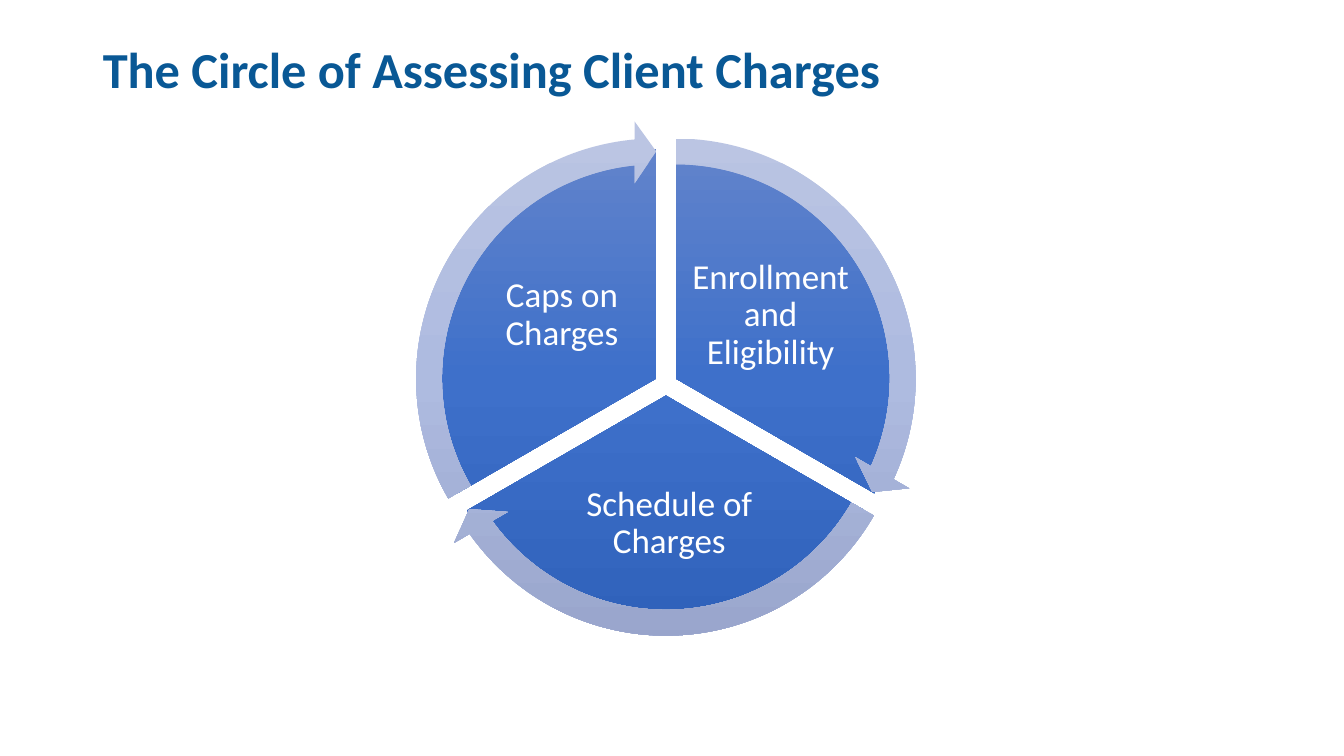
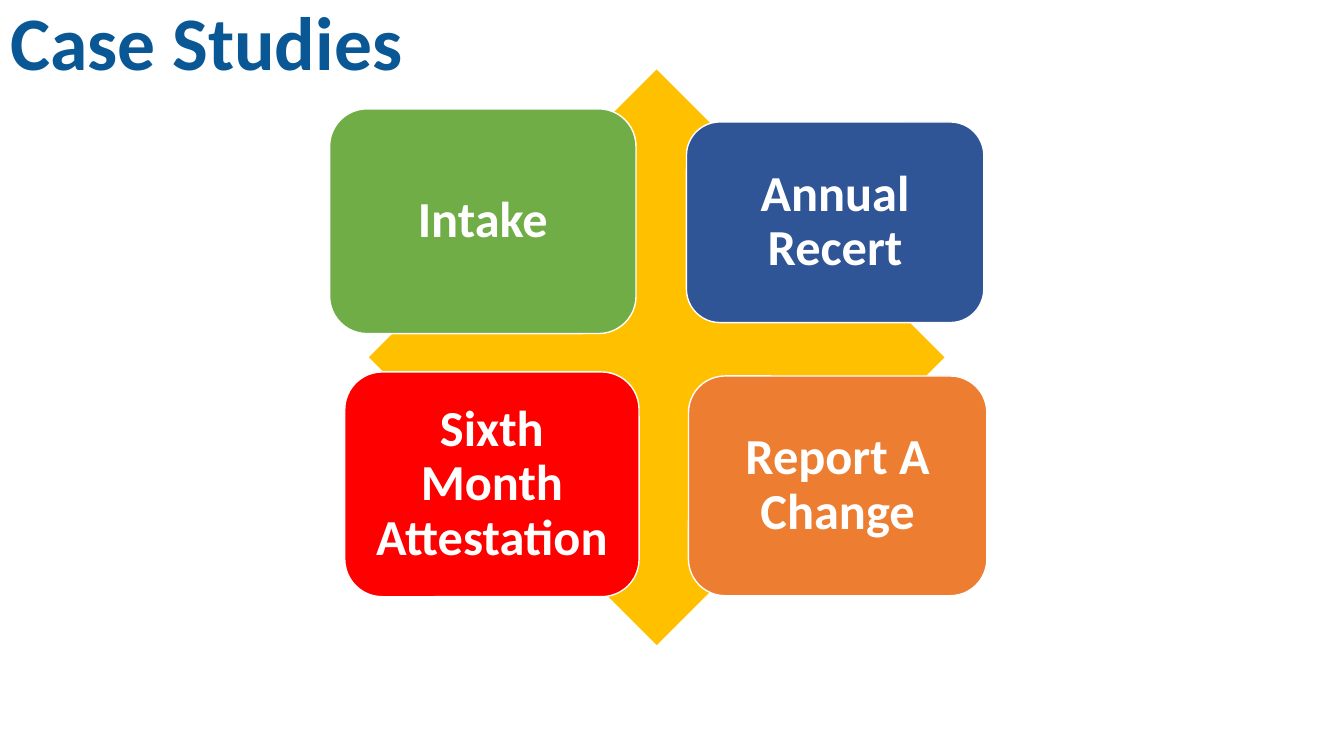
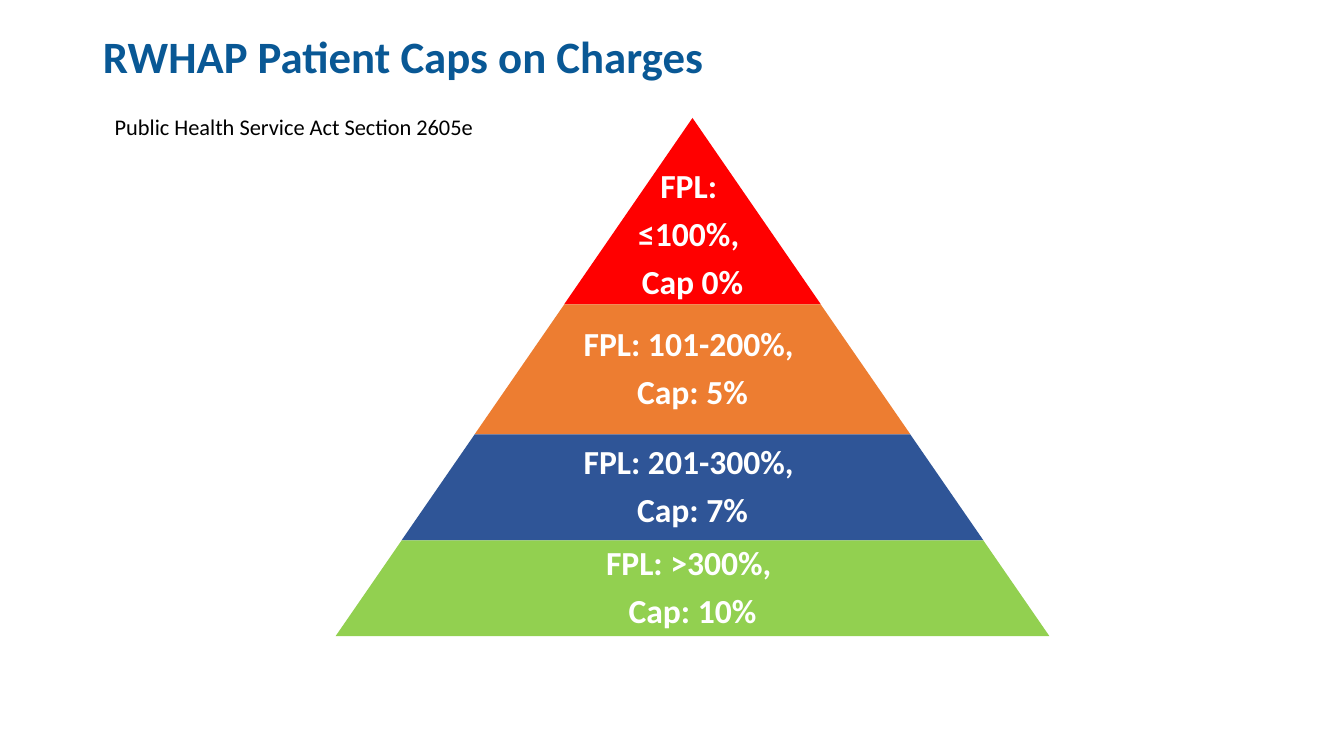
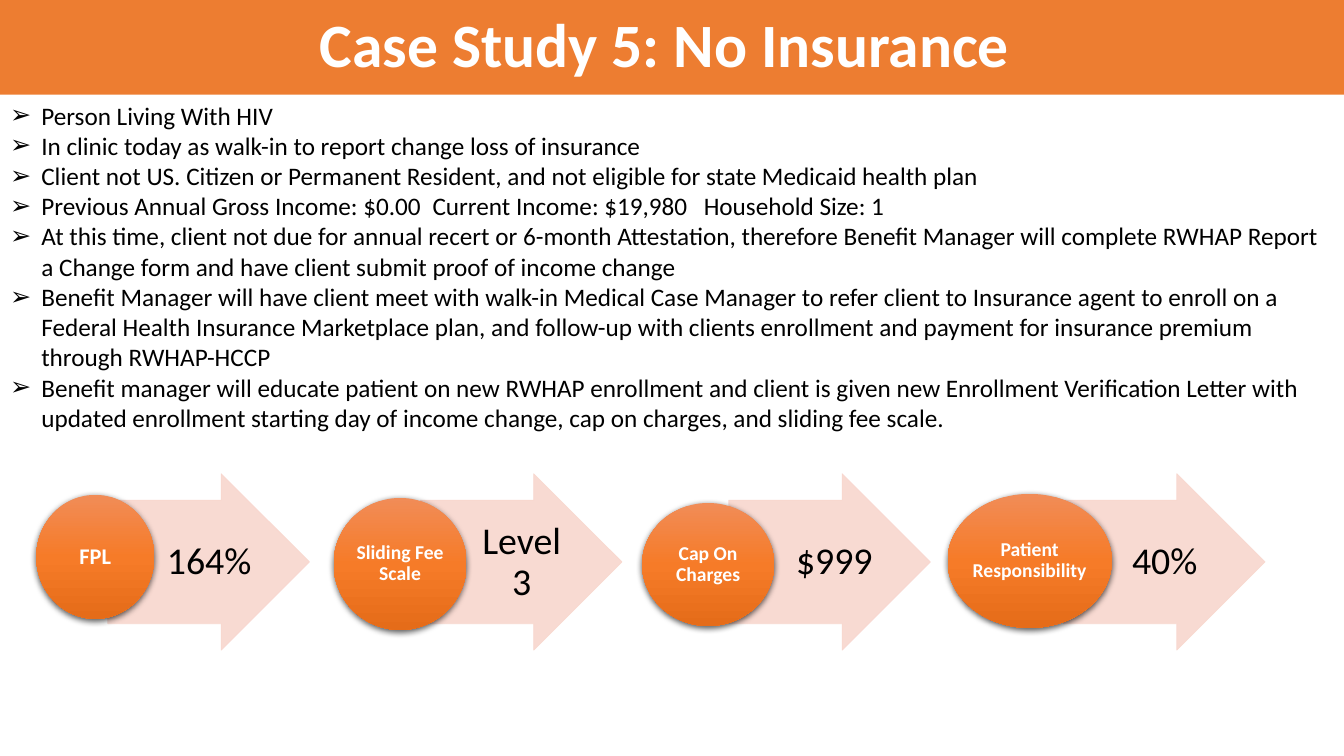
from copy import deepcopy

from lxml import etree
from pptx import Presentation
from pptx import util as u
from pptx.dml.color import RGBColor
from pptx.enum import shapes, text
from pptx.oxml.ns import qn

FONT = "Calibri"
WHITE = RGBColor(0xFF, 0xFF, 0xFF)
BLACK = RGBColor(0x00, 0x00, 0x00)
NAVY = RGBColor(0x09, 0x58, 0x95)
BLUE = RGBColor(0x2F, 0x55, 0x97)
GREEN = RGBColor(0x70, 0xAD, 0x47)
LIME = RGBColor(0x92, 0xD0, 0x50)
RED = RGBColor(0xFF, 0x00, 0x00)
ORANGE = RGBColor(0xED, 0x7D, 0x31)
GOLD = RGBColor(0xFF, 0xC0, 0x00)
PEACH = RGBColor(0xF8, 0xD7, 0xCE)
PIE_SHADES = [RGBColor.from_string(c) for c in ("6183CB", "3E70CA", "3062BB")]
RING_SHADES = [RGBColor.from_string(c) for c in ("BBC5E3", "AEBBE0", "98A4CB")]
BUTTON_SHADES = [RGBColor.from_string(c) for c in ("F18C57", "F67B28", "E56C19")]

SHAPE = shapes.MSO_SHAPE
ALIGN = text.PP_ALIGN
ANCHOR = text.MSO_ANCHOR

deck = Presentation()
deck.slide_width, deck.slide_height = u.Inches(13.33), u.Inches(7.5)

# All areas are (left, top, width, height) on a grid of 40 columns and 30 rows.
COLUMN, ROW = deck.slide_width / 40, deck.slide_height / 30


def draw(page, kind, area, fill=None, adjust=()):
    """Add a preset shape (a text box if kind is None); a list of fills is a gradient."""
    left, top, wide, high = area
    spot = [round(n) for n in (left * COLUMN, top * ROW, wide * COLUMN, high * ROW)]
    if kind is None:
        return page.shapes.add_textbox(*spot)
    shape = page.shapes.add_shape(kind, *spot)
    shape.shadow.inherit = False
    shape.line.fill.background()
    for index, value in enumerate(adjust):
        shape.adjustments[index] = value
    if isinstance(fill, list):
        shape.fill.gradient()
        shape.fill.gradient_angle = 270
        stops = shape.element.spPr.find(".//" + qn("a:gsLst"))
        stops.insert(1, deepcopy(stops[0]))
        for stop, colour, position in zip(shape.fill.gradient_stops, fill, (0, 0.5, 1)):
            stop.color.rgb, stop.position = colour, position
    else:
        shape.fill.solid()
        shape.fill.fore_color.rgb = fill
    return shape


def write(box, lines, size, colour=WHITE, bold=False, align=ALIGN.CENTER,
          anchor=ANCHOR.MIDDLE, spacing=0.9, after=0, margins=(0.1, 0.05, 0.1, 0.05)):
    """Fill a box with one paragraph a line; margins are left, top, right, bottom inches."""
    frame = box.text_frame
    frame.word_wrap, frame.auto_size = True, text.MSO_AUTO_SIZE.NONE
    frame.vertical_anchor = anchor
    (frame.margin_left, frame.margin_top,
     frame.margin_right, frame.margin_bottom) = map(u.Inches, margins)
    for index, line in enumerate(lines):
        para = frame.add_paragraph() if index else frame.paragraphs[0]
        para.alignment, para.line_spacing = align, spacing
        para.space_before, para.space_after = u.Pt(0), u.Pt(after)
        span = para.add_run()
        span.text = line
        span.font.name, span.font.size, span.font.bold = FONT, u.Pt(size), bold
        span.font.color.rgb = colour


# Pages and titles
TITLE_ONLY, TITLE_AND_BODY = deck.slide_layouts[5], deck.slide_layouts[1]
TITLES = [
    (TITLE_ONLY, "The Circle of Assessing Client Charges", 36, (2.76, 1.04, 34.5, 3.64)),
    (TITLE_ONLY, "Case Studies", 54, (0, 0, 40, 3.68)),
    (TITLE_ONLY, "RWHAP Patient Caps on Charges", 32, (2.76, 0.52, 34.5, 3.64)),
    (TITLE_AND_BODY, "Case Study 5: No Insurance ", 44, (0, 0, 40, 3.76)),
]
pages = []
for layout, heading, size, (left, top, wide, high) in TITLES:
    page = deck.slides.add_slide(layout)
    title = page.shapes.title
    title.left, title.top = round(left * COLUMN), round(top * ROW)
    title.width, title.height = round(wide * COLUMN), round(high * ROW)
    banner = layout is TITLE_AND_BODY
    if banner:
        title.fill.solid()
        title.fill.fore_color.rgb = ORANGE
    write(title, [heading], size, WHITE if banner else NAVY, bold=True,
          align=ALIGN.CENTER if banner else ALIGN.LEFT)
    pages.append(page)
circle_page, studies_page, caps_page, insurance_page = pages

# Circle of three sectors, each with an arrow around it
SECTORS = [
    ("Enrollment and Eligibility", (20.11, 15.02), (162, 18), (14.72, 161.99),
     (20.49, 9.8, 4.89, 5.44)),
    ("Schedule of Charges", (19.82, 15.7), (18, 90), (86.72, 18),
     (16.26, 18.4, 7.32, 4.76)),
    ("Caps on Charges", (19.53, 15.02), (90, 162), (158.73, 90),
     (14.28, 9.8, 4.89, 5.44)),
]
PIE_SIZE, RING_SIZE = (13.65, 18.2), (15.36, 20.48)
for label, (x, y), angles, sweep, label_area in SECTORS:
    wide, high = PIE_SIZE
    draw(circle_page, SHAPE.PIE, (x - wide / 2, y - high / 2, wide, high), PIE_SHADES, angles)
    write(draw(circle_page, None, label_area), [label], 25, margins=[0.03] * 4)
for label, (x, y), angles, sweep, label_area in SECTORS:
    wide, high = RING_SIZE
    draw(circle_page, SHAPE.CIRCULAR_ARROW, (x - wide / 2, y - high / 2, wide, high),
         RING_SHADES, (0.05, 3.28, *sweep, 0.06))

# Four case studies on a diamond
draw(studies_page, SHAPE.DIAMOND, (10.98, 2.76, 17.13, 22.84), GOLD)
for label, colour, area in [
    ("Intake", GREEN, (9.81, 4.32, 9.12, 8.92)),
    ("Annual Recert", BLUE, (20.43, 4.84, 8.85, 7.96)),
    ("Sixth Month Attestation", RED, (10.26, 14.76, 8.76, 8.92)),
    ("Report A Change", ORANGE, (20.49, 14.92, 8.88, 8.72)),
]:
    card = draw(studies_page, SHAPE.ROUNDED_RECTANGLE, area, colour)
    card.line.color.rgb, card.line.width = WHITE, u.Pt(1)
    write(card, [label], 36, bold=True, margins=[0.15] * 4)

# Pyramid: each tier is as wide as its depth below the apex asks for
APEX_X, APEX_Y, BASE = 20.61, 4.68, 21.24
TIERS = [
    (7.4, RED, ["FPL: ", "≤100%, ", "Cap 0%"]),
    (5.16, ORANGE, ["FPL: 101-200%, ", "Cap: 5%"]),
    (4.2, BLUE, ["FPL: 201-300%, ", "Cap: 7%"]),
    (3.8, LIME, ["FPL: >300%, ", "Cap: 10%"]),
]
total = sum(high for high, colour, lines in TIERS)
depth = 0
for high, colour, lines in TIERS:
    wide = BASE * (depth + high) / total
    area = (APEX_X - wide / 2, APEX_Y + depth, wide, high)
    draw(caps_page, SHAPE.TRAPEZOID, area, colour, [0.69])
    write(draw(caps_page, None, area), lines, 24, bold=True, after=8.4, margins=[0.03] * 4,
          anchor=ANCHOR.MIDDLE if depth else ANCHOR.BOTTOM)
    depth += high
write(draw(caps_page, None, (3.12, 4.28, 17.49, 1.48)),
      ["Public Health Service Act Section 2605e"], 16, BLACK,
      align=ALIGN.LEFT, anchor=ANCHOR.TOP, spacing=1.0)

# Case study facts
FACTS = [
    "Person Living With HIV",
    "In clinic today as walk-in to report change loss of insurance",
    "Client not US. Citizen or Permanent Resident, and not eligible for state Medicaid "
    "health plan",
    "Previous Annual Gross Income: $0.00\tCurrent Income: $19,980\tHousehold Size: 1",
    "At this time, client not due for annual recert or 6-month Attestation, therefore Benefit "
    "Manager will complete RWHAP Report a Change form and have client submit proof of income "
    "change",
    "Benefit Manager will have client meet with walk-in Medical Case Manager to refer client "
    "to Insurance agent to enroll on a Federal Health Insurance Marketplace plan, and "
    "follow-up with clients enrollment and payment for insurance premium through RWHAP-HCCP",
    "Benefit manager will educate patient on new RWHAP enrollment and client is given new "
    "Enrollment Verification Letter with updated enrollment starting day of income change, "
    "cap on charges, and sliding fee scale.",
]
INDENT = u.Inches(0.31)
TAB_STOPS = (4.19, 6.88)
body = insurance_page.placeholders[1]
body.left, body.top = 0, round(3.76 * ROW)
body.width, body.height = deck.slide_width, round(14 * ROW)
write(body, FACTS, 18, BLACK, align=ALIGN.LEFT, anchor=ANCHOR.TOP, spacing=1.0)
for para in body.text_frame.paragraphs:
    props = para._p.get_or_add_pPr()
    props.set("marL", str(INDENT))
    props.set("indent", str(-INDENT))
    etree.SubElement(props, qn("a:buChar"), char="➢")
    if "\t" in para.text:
        tabs = etree.SubElement(props, qn("a:tabLst"))
        for stop in TAB_STOPS:
            etree.SubElement(tabs, qn("a:tab"), pos=str(u.Inches(stop)), algn="l")

# Results: an arrow with the value, a button with the name
for value, arrow_left, name, size, button_area in [
    ("164%", 3.21, "FPL", 16, (1.08, 19.64, 3.51, 4.92)),
    ("Level 3", 12.51, "Sliding Fee Scale", 14, (9.93, 19.76, 3.96, 5.24)),
    (" $999", 21.69, "Cap On Charges", 14, (19.11, 19.96, 3.93, 4.88)),
    ("40%", 31.65, "Patient Responsibility ", 14, (28.2, 19.6, 4.89, 5.32)),
]:
    arrow = draw(insurance_page, SHAPE.RIGHT_ARROW, (arrow_left, 18.8, 6, 7), PEACH, (0.7, 0.5))
    arrow.line.color.rgb, arrow.line.width = PEACH, u.Pt(0.5)
    for colour in arrow.element.spPr.iter(qn("a:srgbClr")):
        etree.SubElement(colour, qn("a:alpha"), val="90000")
    value_box = draw(insurance_page, None, (arrow_left + 1.5, 19.88, 2.94, 4.88))
    write(value_box, [value], 27, BLACK, margins=(0.07, 0.02, 0.04, 0.02))

    button = draw(insurance_page, SHAPE.OVAL, button_area, BUTTON_SHADES)
    effects = button.element.spPr.find(qn("a:effectLst"))
    shadow = etree.SubElement(effects, qn("a:outerShdw"), blurRad=str(u.Pt(4.5)),
                              dist=str(u.Pt(1.5)), dir="5400000", rotWithShape="0")
    shade = etree.SubElement(shadow, qn("a:srgbClr"), val=str(BLACK))
    etree.SubElement(shade, qn("a:alpha"), val="63000")
    write(button, [name], size, bold=True, margins=[0] * 4)

deck.save("out.pptx")
